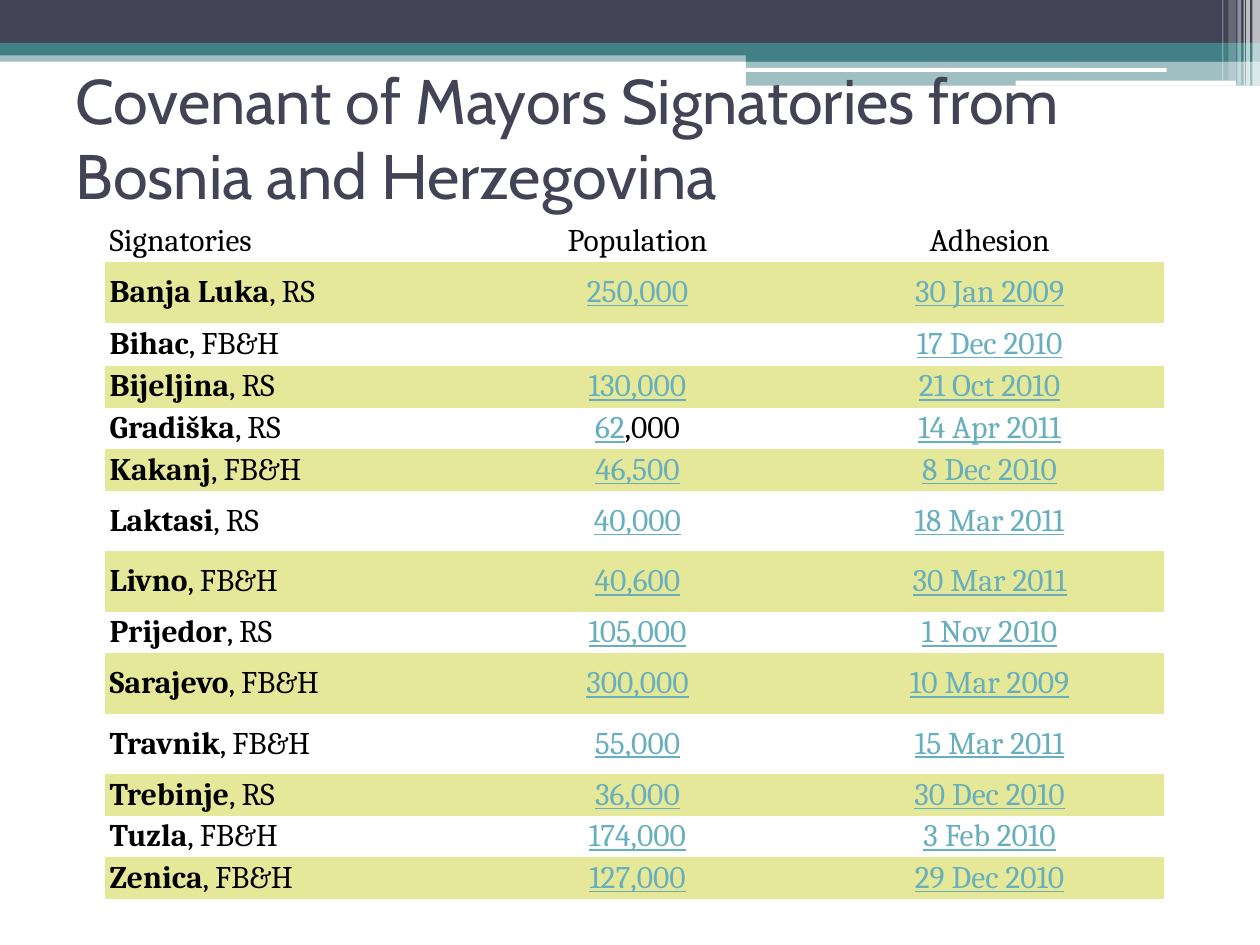
from pptx import Presentation
from pptx.dml.color import RGBColor
from pptx.enum.shapes import MSO_SHAPE
from pptx.enum.text import MSO_ANCHOR, MSO_AUTO_SIZE, PP_ALIGN
from pptx.oxml.ns import qn
from pptx.util import Inches, Pt
from lxml.etree import SubElement

NAVY = RGBColor(0x42, 0x44, 0x56)
TEAL = RGBColor(0x43, 0x80, 0x86)
WHITE = RGBColor(0xFF, 0xFF, 0xFF)
BLACK = RGBColor(0, 0, 0)
LIME = RGBColor(0xE6, 0xE8, 0x99)
LINK = RGBColor(0x67, 0xAF, 0xBD)

TITLE_FONT = "Cabin"
TABLE_FONT = "Cambria"
NO_STYLE = "{2D5ABB26-0587-4C30-8999-92F81FD0307C}"

BANDS = [
    (0, 0.4, 10, 0.09, TEAL, 50),
    (0, 0, 10, 0.34, NAVY, 100),
    (0, 0.34, 10, 0.1, TEAL, 100),
    (5.92, 0.39, 4.08, 0.1, TEAL, 100),
    (5.92, 0.48, 4.08, 0.2, TEAL, 50),
]
HIGHLIGHTS = [(5.91, 0.54, 3.35, 0.03), (8.06, 0.64, 1.75, 0.04)]
STRIPES = [
    (9.94, 0.06, 0.68, 65),
    (9.89, 0.03, 0.68, 65),
    (9.87, 0.01, 0.68, 60),
    (9.82, 0.03, 0.68, 40),
    (9.75, 0.06, 0.64, 20),
    (9.7, 0.01, 0.64, 30),
]

HEADINGS = ["Signatories", "Population", "Adhesion"]
SIGNATORIES = [
    ("Banja Luka", "RS", "250,000", "30 Jan 2009"),
    ("Bihac", "FB&H", "", "17 Dec 2010"),
    ("Bijeljina", "RS", "130,000", "21 Oct 2010"),
    ("Gradiška", "RS", "62,000", "14 Apr 2011"),
    ("Kakanj", "FB&H", "46,500", "8 Dec 2010"),
    ("Laktasi", "RS", "40,000", "18 Mar 2011"),
    ("Livno", "FB&H", "40,600", "30 Mar 2011"),
    ("Prijedor", "RS", "105,000", "1 Nov 2010"),
    ("Sarajevo", "FB&H", "300,000", "10 Mar 2009"),
    ("Travnik", "FB&H", "55,000", "15 Mar 2011"),
    ("Trebinje", "RS", "36,000", "30 Dec 2010"),
    ("Tuzla", "FB&H", "174,000", "3 Feb 2010"),
    ("Zenica", "FB&H", "127,000", "29 Dec 2010"),
]
TALL_ROWS = {"Banja Luka", "Laktasi", "Livno", "Sarajevo", "Travnik"}
COLUMN_WIDTHS = [2.82, 2.82, 2.77]


def add_bar(page, left, top, width, height, color, opacity=100,
            kind=MSO_SHAPE.RECTANGLE):
    bar = page.shapes.add_shape(
        kind, Inches(left), Inches(top), Inches(width), Inches(height))
    bar.shadow.inherit = False
    bar.line.fill.background()
    bar.fill.solid()
    bar.fill.fore_color.rgb = color
    if opacity < 100:
        tint = bar._element.spPr.find(qn("a:solidFill"))[0]
        SubElement(tint, qn("a:alpha")).set("val", str(opacity * 1000))


def add_banner(page, left, top):
    for x, y, width, height, color, opacity in BANDS:
        add_bar(page, left + x, top + y, width, height, color, opacity)
    for x, y, width, height in HIGHLIGHTS:
        add_bar(page, left + x, top + y, width, height, WHITE,
                kind=MSO_SHAPE.ROUNDED_RECTANGLE)
    for x, width, height, opacity in STRIPES:
        add_bar(page, left + x, top, width, height, WHITE, opacity)


def add_run(para, text, font, size, color, bold=False, underline=False):
    span = para.add_run()
    span.text = text
    span.font.name = font
    span.font.size = Pt(size)
    span.font.color.rgb = color
    span.font.bold = bold
    span.font.underline = underline


def place_title(page, left, top, width, height):
    title = page.shapes.title
    title.left, title.top = Inches(left), Inches(top)
    title.width, title.height = Inches(width), Inches(height)
    frame = title.text_frame
    frame.word_wrap = True
    frame.auto_size = MSO_AUTO_SIZE.NONE
    frame.vertical_anchor = MSO_ANCHOR.MIDDLE
    para = frame.paragraphs[0]
    para.alignment = PP_ALIGN.LEFT
    add_run(para, "Covenant of Mayors Signatories from Bosnia and Herzegovina",
            TITLE_FONT, 36, NAVY)
    page.shapes._spTree.append(title._element)


def fill_cell(cell, spans, color, alignment):
    cell.margin_left = cell.margin_right = Inches(0.04)
    cell.margin_top = cell.margin_bottom = Inches(0.02)
    cell.vertical_anchor = MSO_ANCHOR.MIDDLE
    if color is None:
        cell.fill.background()
    else:
        cell.fill.solid()
        cell.fill.fore_color.rgb = color
    para = cell.text_frame.paragraphs[0]
    para.alignment = alignment
    for text, style in spans:
        add_run(para, text, TABLE_FONT, 18, style.get("color", BLACK),
                style.get("bold", False), style.get("underline", False))


def population_spans(town, population):
    link = {"color": LINK, "underline": True}
    if not population:
        return []
    if town == "Gradiška":
        return [(population[:2], link), (population[2:], {})]
    return [(population, link)]


def add_signatory_table(page, left, top, width, height):
    box = page.shapes.add_table(
        len(SIGNATORIES) + 1, len(HEADINGS),
        Inches(left), Inches(top), Inches(width), Inches(height))
    table = box.table
    table.first_row = table.horz_banding = False
    table._tbl.tblPr.find(qn("a:tableStyleId")).text = NO_STYLE
    for column, column_width in zip(table.columns, COLUMN_WIDTHS):
        column.width = Inches(column_width)

    rows = [(None, [[(heading, {})] for heading in HEADINGS])]
    for index, (town, entity, population, date) in enumerate(SIGNATORIES):
        rows.append((WHITE if index % 2 else LIME, [
            [(town, {"bold": True}), (f", {entity}", {})],
            population_spans(town, population),
            [(date, {"color": LINK, "underline": True})],
        ]))
    for row, (color, contents) in zip(table.rows, rows):
        row.height = Inches(0.48 if contents[0][0][0] in TALL_ROWS else 0.33)
        for index, (cell, spans) in enumerate(zip(row.cells, contents)):
            alignment = PP_ALIGN.CENTER if index else PP_ALIGN.LEFT
            fill_cell(cell, spans, color, alignment)


def main():
    deck = Presentation()
    deck.slide_width, deck.slide_height = Inches(10), Inches(7.5)
    page = deck.slides.add_slide(deck.slide_layouts[5])
    add_banner(page, 0, 0)
    place_title(page, 0.5, 0.5, 9, 1.17)
    add_signatory_table(page, 0.83, 1.75, sum(COLUMN_WIDTHS), 5.44)
    deck.save("out.pptx")


if __name__ == "__main__":
    main()
